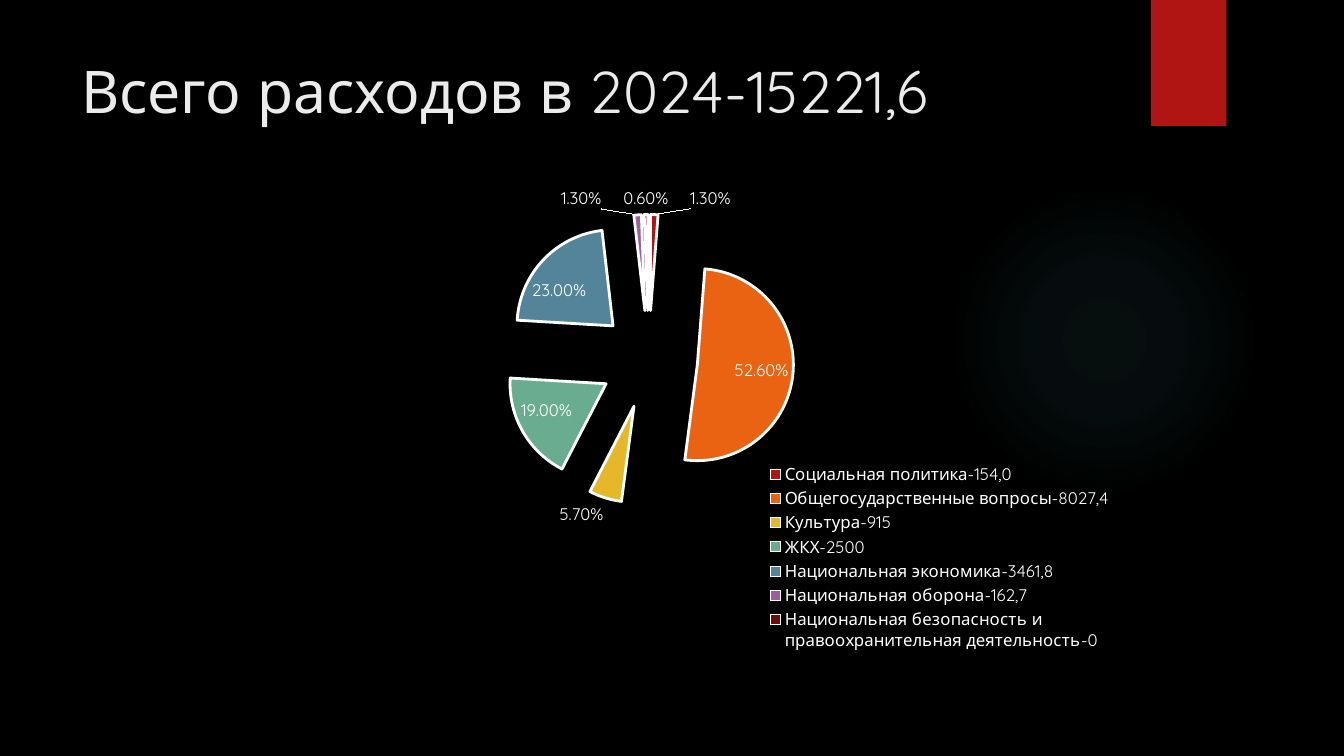
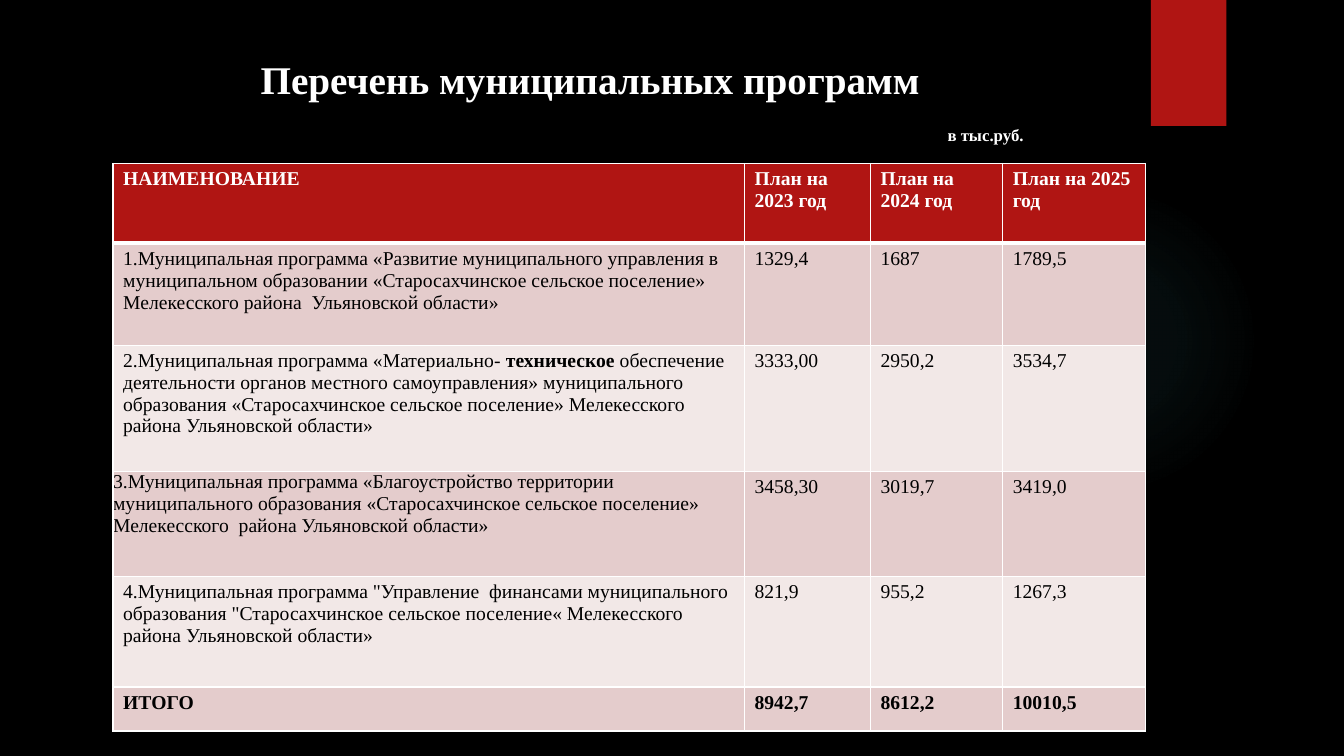
from lxml import etree
from pptx import Presentation
from pptx.chart.data import CategoryChartData
from pptx.dml.color import RGBColor
from pptx.enum.chart import XL_CHART_TYPE, XL_LABEL_POSITION, XL_LEGEND_POSITION
from pptx.enum.shapes import MSO_SHAPE
from pptx.enum.text import PP_ALIGN
from pptx.oxml import parse_xml
from pptx.oxml.ns import nsdecls, qn
from pptx.util import Pt

PIE = XL_CHART_TYPE.PIE
BEST_FIT = XL_LABEL_POSITION.BEST_FIT
BOTTOM = XL_LEGEND_POSITION.BOTTOM
RECT, OVAL = MSO_SHAPE.RECTANGLE, MSO_SHAPE.OVAL
LEFT, CENTER = PP_ALIGN.LEFT, PP_ALIGN.CENTER

SANS, SERIF = "Quicksand", "Times New Roman"
BLACK, WHITE, RED, GLOW, TITLE = "000000", "FFFFFF", "B01513", "50B9C1", "EBEBEB"
BANDS = ("E4CCCC", "F2E8E7")
TITLE_BOX = (51, 35.75, 741, 110)
EXPLOSION = 51

EXPENSES = [
    ("Социальная политика-154,0", 0.013, RED),
    ("Общегосударственные вопросы-8027,4", 0.526, "EA6312"),
    ("Культура-915", 0.057, "E6B729"),
    ("ЖКХ-2500", 0.19, "6AAC90"),
    ("Национальная экономика-3461,8", 0.23, "54849A"),
    ("Национальная оборона-162,7", 0.013, "9E5E9B"),
    ("Национальная безопасность и правоохранительная деятельность-0", 0.006, "6A0D0B"),
]

COLUMNS = (451, 90, 94.5, 102)
ROW_HEIGHTS = (57, 73, 90, 75, 79, 31.5)
PROGRAMS = [
    ("НАИМЕНОВАНИЕ", "План на 2023 год", "План на 2024 год", "План на 2025 год"),
    ("1.Муниципальная программа «Развитие муниципального управления в "
     "муниципальном образовании «Старосахчинское сельское поселение» "
     "Мелекесского района  Ульяновской области»", "1329,4", "1687", "1789,5"),
    ("2.Муниципальная программа «Материально- |техническое| обеспечение "
     "деятельности органов местного самоуправления» муниципального образования "
     "«Старосахчинское сельское поселение» Мелекесского района Ульяновской области»",
     "3333,00", "2950,2", "3534,7"),
    ("3.Муниципальная программа «Благоустройство территории муниципального "
     "образования «Старосахчинское сельское поселение» Мелекесского  района "
     "Ульяновской области»", "3458,30", "3019,7", "3419,0"),
    ("4.Муниципальная программа \"Управление  финансами муниципального "
     "образования \"Старосахчинское сельское поселение« Мелекесского района "
     "Ульяновской области»", "821,9", "955,2", "1267,3"),
    ("ИТОГО", "8942,7", "8612,2", "10010,5"),
]


def rgb(value):
    """Turn a hex string into a colour."""
    return RGBColor.from_string(value)


def pts(*values):
    """Turn numbers into point lengths."""
    return [Pt(v) for v in values]


def set_font(font, size, color=WHITE, name=SANS, bold=False):
    """Format a font."""
    font.size, font.name, font.bold = Pt(size), name, bold
    font.color.rgb = rgb(color)


def write(tf, text, size=14, color=WHITE, name=SERIF, bold=False, align=LEFT):
    """Write one paragraph, flipping bold at each bar in the text."""
    tf.word_wrap = True
    p = tf.paragraphs[0]
    p.alignment = align
    for i, part in enumerate(text.split("|")):
        r = p.add_run()
        r.text = part
        set_font(r.font, size, color, name, bold != (i % 2 == 1))


def add_text(slide, box, text, **fmt):
    """Add a text box."""
    write(slide.shapes.add_textbox(*pts(*box)).text_frame, text, **fmt)


def add_plain_shape(slide, kind, box, color):
    """Add a filled shape without outline or shadow."""
    sp = slide.shapes.add_shape(kind, *pts(*box))
    sp.shadow.inherit = False
    sp.fill.solid()
    sp.fill.fore_color.rgb = rgb(color)
    sp.line.fill.background()
    return sp


def add_glow(slide):
    """Add the faint round glow."""
    sp = add_plain_shape(slide, OVAL, (677.5, 132, 222, 222), GLOW)
    stops = "".join(
        f'<a:gs pos="{pos * 1000}"><a:srgbClr val="{GLOW}">'
        f'<a:alpha val="{alpha * 1000}"/></a:srgbClr></a:gs>'
        for pos, alpha in ((0, 7), (36, 6), (69, 0)))
    grad = parse_xml(
        f'<a:gradFill {nsdecls("a")}><a:gsLst>{stops}</a:gsLst><a:path path="circle">'
        '<a:fillToRect l="50000" t="50000" r="50000" b="50000"/></a:path></a:gradFill>')
    solid = sp.element.spPr.find(qn("a:solidFill"))
    solid.getparent().replace(solid, grad)


def add_slide(prs):
    """Add a blank slide with the shared decoration."""
    slide = prs.slides.add_slide(prs.slide_layouts[6])
    add_glow(slide)
    add_plain_shape(slide, RECT, (822, 0, 54, 90), RED)
    return slide


def set_layout(parent, index, **values):
    """Place a chart part by fractions of the chart."""
    for old in parent.findall(qn("c:layout")):
        parent.remove(old)
    layout = etree.Element(qn("c:layout"))
    manual = etree.SubElement(layout, qn("c:manualLayout"))
    for tag, value in values.items():
        etree.SubElement(manual, qn(f"c:{tag}")).set("val", str(value))
    parent.insert(index, layout)


def add_pie(slide, box, rows):
    """Add the exploded pie chart with labels and legend."""
    data = CategoryChartData(number_format="0.00%")
    data.categories = [name for name, _, _ in rows]
    data.add_series("Series 1", [value for _, value, _ in rows])
    chart = slide.shapes.add_chart(PIE, *pts(*box), data).chart
    chart.has_title = False
    set_font(chart.font, 10)
    plot = chart.plots[0]
    plot.vary_by_categories = True
    for i, (_, _, color) in enumerate(rows):
        fmt = plot.series[0].points[i].format
        fmt.fill.solid()
        fmt.fill.fore_color.rgb = rgb(color)
        fmt.line.color.rgb = rgb(WHITE)
        fmt.line.width = Pt(2)
    explosion = etree.Element(qn("c:explosion"))
    explosion.set("val", str(EXPLOSION))
    next(chart.element.iter(qn("c:dPt"))).addprevious(explosion)
    plot.has_data_labels = True
    labels = plot.data_labels
    labels.show_value, labels.show_percentage = True, False
    labels.number_format, labels.number_format_is_linked = "0.00%", False
    labels.position = BEST_FIT
    set_font(labels.font, 12)
    chart.has_legend = True
    chart.legend.position = BOTTOM
    chart.legend.include_in_layout = False
    set_font(chart.legend.font, 12)
    area = next(chart.element.iter(qn("c:plotArea")))
    legend = next(chart.element.iter(qn("c:legend")))
    set_layout(area, 0, layoutTarget="inner", xMode="edge", yMode="edge",
               x=0.14, y=0.083, w=0.784, h=0.598)
    set_layout(legend, 1, xMode="edge", yMode="edge", x=0.63, y=0.59, w=0.34, h=0.4)


def set_borders(cell, bottom):
    """Draw white cell borders."""
    tc_pr = cell._tc.get_or_add_tcPr()
    widths = {"lnL": 1, "lnR": 1, "lnT": 1, "lnB": bottom}
    for i, (tag, width) in enumerate(widths.items()):
        tc_pr.insert(i, parse_xml(
            f'<a:{tag} {nsdecls("a")} w="{Pt(width)}"><a:solidFill>'
            f'<a:srgbClr val="{WHITE}"/></a:solidFill></a:{tag}>'))


def add_programs(slide, left, top):
    """Add the banded table of programmes."""
    size = pts(sum(COLUMNS), sum(ROW_HEIGHTS))
    table = slide.shapes.add_table(
        len(PROGRAMS), len(COLUMNS), *pts(left, top), *size).table
    for column, width in zip(table.columns, COLUMNS):
        column.width = Pt(width)
    last = len(PROGRAMS) - 1
    for i, texts in enumerate(PROGRAMS):
        table.rows[i].height = Pt(ROW_HEIGHTS[i])
        header = i == 0
        for j, text in enumerate(texts):
            cell = table.cell(i, j)
            cell.fill.solid()
            cell.fill.fore_color.rgb = rgb(RED if header else BANDS[(i - 1) % 2])
            set_borders(cell, 3 if header else 1)
            write(cell.text_frame, text, color=WHITE if header else BLACK,
                  bold=i in (0, last))
    flush = table.cell(3, 0)
    flush.margin_left = flush.margin_top = flush.margin_right = 0


def main():
    """Build the two slides and save them."""
    prs = Presentation()
    prs.slide_width, prs.slide_height = pts(960, 540)
    background = prs.slide_master.background.fill
    background.solid()
    background.fore_color.rgb = rgb(BLACK)

    slide = add_slide(prs)
    add_text(slide, TITLE_BOX, "Всего расходов в 2024-15221,6",
             size=42, color=TITLE, name=SANS)
    add_pie(slide, (50.5, 124.5, 776, 346.5), EXPENSES)

    slide = add_slide(prs)
    add_text(slide, TITLE_BOX, "Перечень муниципальных программ",
             size=28, bold=True, align=CENTER)
    add_text(slide, (644, 85.25, 120, 22), "в тыс.руб.",
             size=12, bold=True, align=CENTER)
    add_programs(slide, 80.75, 116.75)

    prs.save("out.pptx")


if __name__ == "__main__":
    main()
